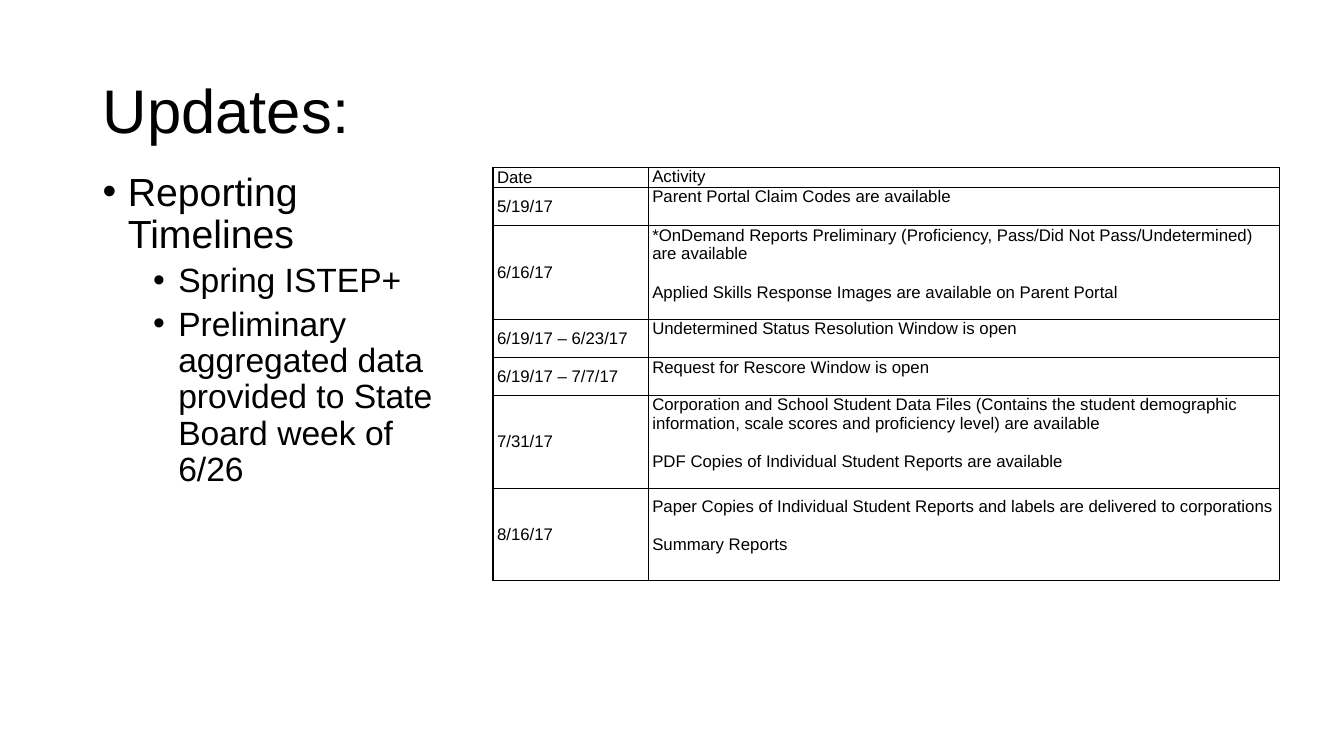
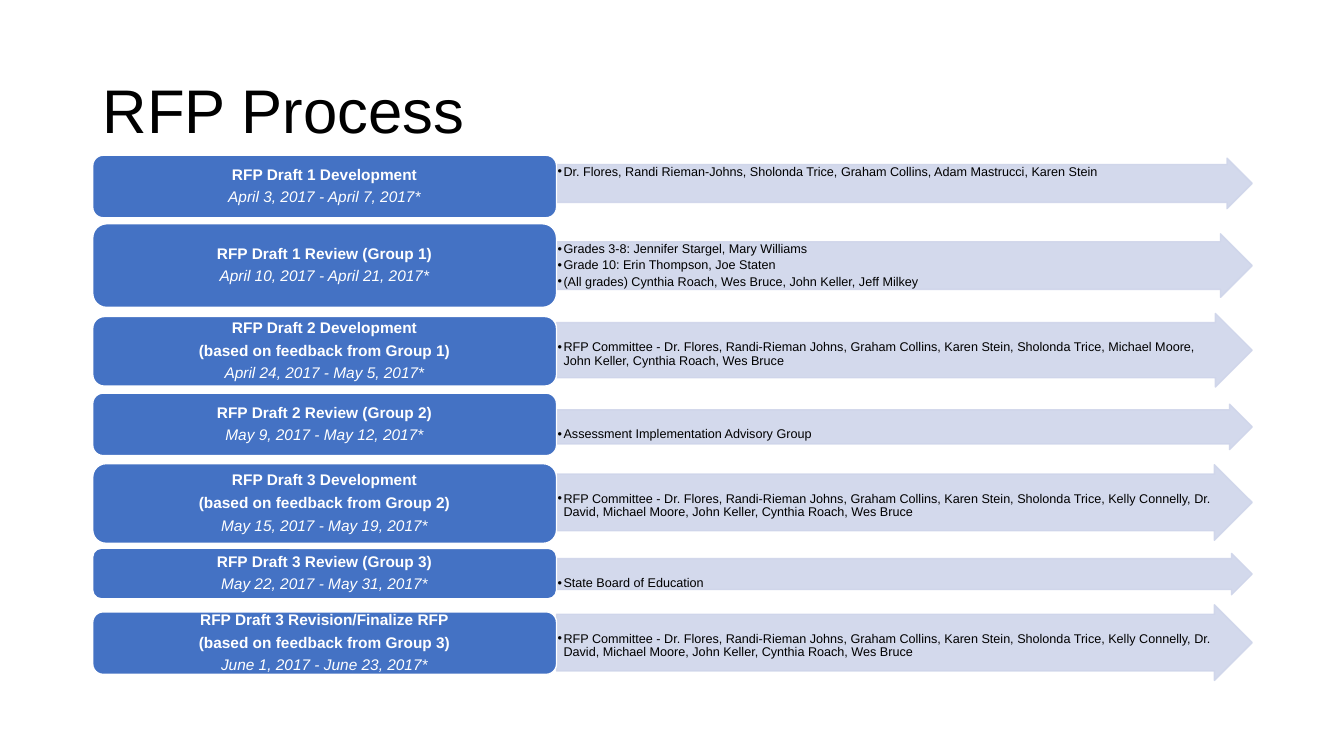
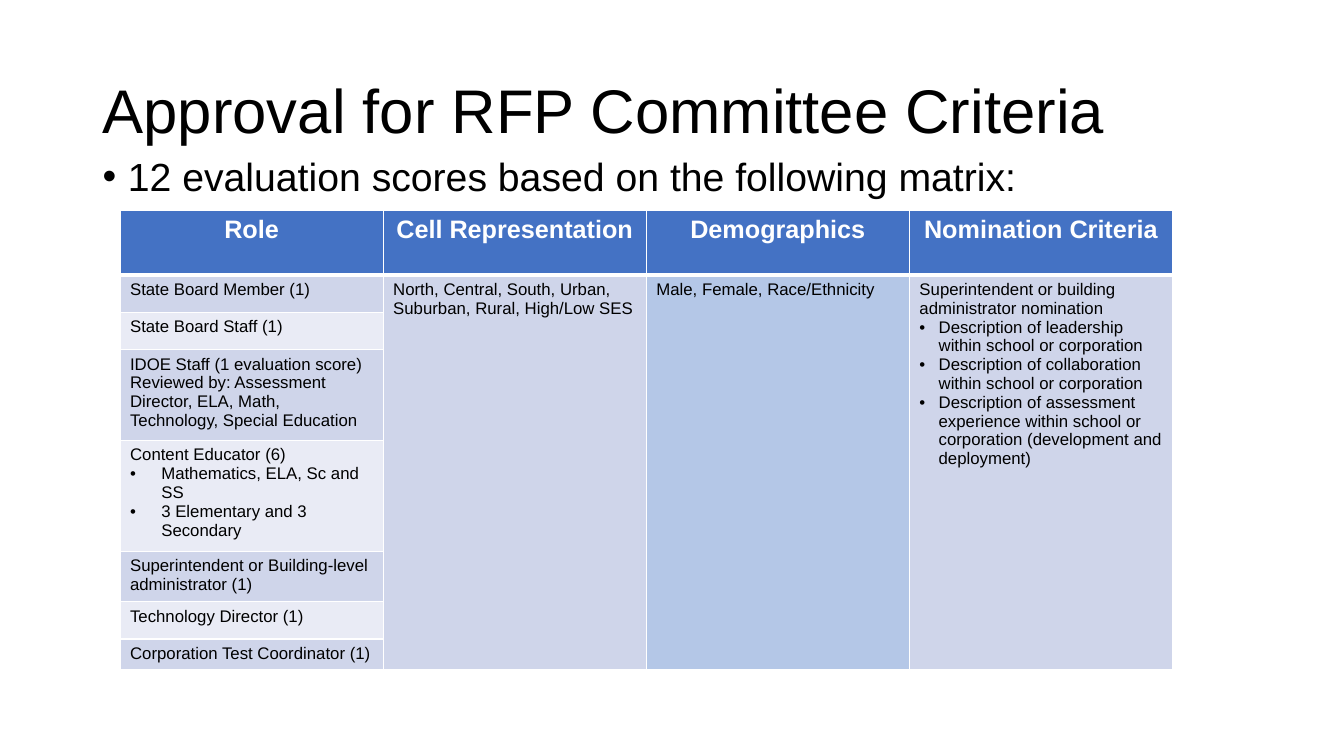
from pptx import Presentation
from pptx.dml.color import RGBColor
from pptx.enum.shapes import MSO_SHAPE
from pptx.enum.text import MSO_ANCHOR, PP_ALIGN
from pptx.util import Pt
from lxml.etree import SubElement
from pptx.oxml.ns import qn

PX = 9144
FONT = "Arial"
COLORS = {
    "black": "000000",
    "white": "FFFFFF",
    "blue": "4472C4",
    "band": "CFD5EA",
    "pale": "E9EBF5",
    "sky": "B4C7E7",
}

STYLES = {
    "title": dict(size=44, spacing=0.9),
    "point": dict(size=28, spacing=0.9, before=10, left=25, hang=25),
    "subpoint": dict(size=24, spacing=0.9, before=5, left=75, hang=25),
    "cell": dict(size=12),
    "cell_gap": dict(size=12, before=13.8),
    "cell_bullet": dict(size=12, left=19, hang=19),
    "cell_wide_bullet": dict(size=12, left=31, hang=31),
    "header": dict(size=18, color="white", bold=True, align=PP_ALIGN.CENTER),
    "stage": dict(size=11, color="white", bold=True, align=PP_ALIGN.CENTER,
                  spacing=0.9, before=4.3),
    "dates": dict(size=11, color="white", italic=True, align=PP_ALIGN.CENTER,
                  spacing=0.9, before=4.3),
    "people": dict(size=9, spacing=0.9, before=1.8, left=6, hang=6),
}

UPDATES = [
    ("Reporting Timelines", "point"),
    ("Spring ISTEP+", "subpoint"),
    ("Preliminary aggregated data provided to State Board week of 6/26", "subpoint"),
]
TIMELINE_COLUMNS = [154, 626]
TIMELINE = [
    (18, 0, "Date", ["Activity"]),
    (38, 0, "5/19/17", ["Parent Portal Claim Codes are available"]),
    (93, 0, "6/16/17", [
        "*OnDemand Reports Preliminary (Proficiency, Pass/Did Not Pass/Undetermined) are available",
        "Applied Skills Response Images are available on Parent Portal"]),
    (38, 0, "6/19/17 – 6/23/17", ["Undetermined Status Resolution Window is open"]),
    (37, 0, "6/19/17 – 7/7/17", ["Request for Rescore Window is open"]),
    (93, 0, "7/31/17", [
        "Corporation and School Student Data Files (Contains the student demographic "
        "information, scale scores and proficiency level) are available",
        "PDF Copies of Individual Student Reports are available"]),
    (91, 8, "8/16/17", [
        "Paper Copies of Individual Student Reports and labels are delivered to corporations",
        "Summary Reports"]),
]

COMMITTEE = "RFP Committee - Dr. Flores, Randi-Rieman Johns, Graham Collins, Karen Stein, Sholonda Trice, "
MEMBERS = "Michael Moore, John Keller, Cynthia Roach, Wes Bruce"
FULL_COMMITTEE = COMMITTEE + "Kelly Connelly, Dr. David, " + MEMBERS
HIGH, LOW = 1, 18
PROCESS = [
    ((154, 62), (157, 50), HIGH, ["RFP Draft 1 Development"], "April 3, 2017 - April 7, 2017*",
     ["Dr. Flores, Randi Rieman-Johns, Sholonda Trice, Graham Collins, Adam Mastrucci, Karen Stein"]),
    ((222, 83), (232, 63), HIGH, ["RFP Draft 1 Review (Group 1)"], "April 10, 2017 - April 21, 2017*",
     ["Grades 3-8: Jennifer Stargel, Mary Williams",
      "Grade 10: Erin Thompson, Joe Staten",
      "(All grades) Cynthia Roach, Wes Bruce, John Keller, Jeff Milkey"]),
    ((314, 69), (311, 73), LOW, ["RFP Draft 2 Development", "(based on feedback from Group 1)"],
     "April 24, 2017 - May 5, 2017*", [COMMITTEE + MEMBERS]),
    ((390, 62), (401, 45), LOW, ["RFP Draft 2 Review (Group 2)"], "May 9, 2017 - May 12, 2017*",
     ["Assessment Implementation Advisory Group"]),
    ((460, 79), (461, 75), LOW, ["RFP Draft 3 Development", "(based on feedback from Group 2)"],
     "May 15, 2017 - May 19, 2017*", [FULL_COMMITTEE]),
    ((544, 50), (549, 41), LOW, ["RFP Draft 3 Review (Group 3)"], "May 22, 2017 - May 31, 2017*",
     ["State Board of Education"]),
    ((607, 62), (600, 75), LOW, ["RFP Draft 3 Revision/Finalize RFP", "(based on feedback from Group 3)"],
     "June 1, 2017 - June 23, 2017*", [FULL_COMMITTEE]),
]

MATRIX_INTRO = [("12 evaluation scores based on the following matrix:", "point")]
MATRIX_HEADERS = ["Role", "Cell Representation", "Demographics", "Nomination Criteria"]
MATRIX_COLUMNS = [261] * len(MATRIX_HEADERS)
MATRIX_HEADER_HEIGHT = 64
ROLES = [
    (37, [("State Board Member (1)", "cell")]),
    (37, [("State Board Staff (1)", "cell")]),
    (84, [("IDOE Staff (1 evaluation score)", "cell"),
          ("Reviewed by: Assessment Director, ELA, Math, Technology, Special Education", "cell")]),
    (104, [("Content Educator (6)", "cell"),
           ("Mathematics, ELA, Sc and SS", "cell_wide_bullet"),
           ("3 Elementary and 3 Secondary", "cell_wide_bullet")]),
    (47, [("Superintendent or Building-level administrator (1)", "cell")]),
    (37, [("Technology Director (1)", "cell")]),
    (28, [("Corporation Test Coordinator (1)", "cell")]),
]
CRITERIA = [
    ("band", [("North, Central, South, Urban, Suburban, Rural, High/Low SES", "cell")]),
    ("sky", [("Male, Female, Race/Ethnicity", "cell")]),
    ("band", [("Superintendent or building administrator nomination", "cell"),
              ("Description of leadership within school or corporation", "cell_bullet"),
              ("Description of collaboration within school or corporation", "cell_bullet"),
              ("Description of assessment experience within school or corporation "
               "(development and deployment)", "cell_bullet")]),
]


def px(*lengths):
    return [round(length * PX) for length in lengths]


def rgb(name):
    return RGBColor.from_string(COLORS[name])


def set_margins(target, left, top, right, bottom):
    (target.margin_left, target.margin_top,
     target.margin_right, target.margin_bottom) = px(left, top, right, bottom)


def write(frame, lines):
    for index, (text, style_name) in enumerate(lines):
        style = STYLES[style_name]
        paragraph = frame.add_paragraph() if index else frame.paragraphs[0]
        paragraph.text = text
        if "hang" in style:
            left, hang = px(style["left"], style["hang"])
            properties = paragraph._p.get_or_add_pPr()
            properties.set("marL", str(left))
            properties.set("indent", str(-hang))
            SubElement(properties, qn("a:buFont"), typeface=FONT)
            SubElement(properties, qn("a:buChar"), char="•")
        paragraph.alignment = style.get("align", PP_ALIGN.LEFT)
        paragraph.line_spacing = style.get("spacing", 1.0)
        paragraph.space_before = Pt(style.get("before", 0) if index else 0)
        for run in paragraph.runs:
            run.font.name = FONT
            run.font.size = Pt(style["size"])
            run.font.bold = style.get("bold", False)
            run.font.italic = style.get("italic", False)
            run.font.color.rgb = rgb(style.get("color", "black"))


def add_text(slide, box, lines, anchor=MSO_ANCHOR.TOP):
    frame = slide.shapes.add_textbox(*px(*box)).text_frame
    frame.word_wrap = True
    frame.vertical_anchor = anchor
    set_margins(frame, 10, 5, 10, 5)
    write(frame, lines)


def add_titled_slide(deck, title):
    slide = deck.slides.add_slide(deck.slide_layouts[6])
    add_text(slide, (92, 40, 1150, 145), [(title, "title")], MSO_ANCHOR.MIDDLE)
    return slide


def add_grid(slide, left, top, widths, heights):
    table = slide.shapes.add_table(
        len(heights), len(widths), *px(left, top, sum(widths), sum(heights))).table
    table.first_row = table.horz_banding = False
    for column, width in zip(table.columns, px(*widths)):
        column.width = width
    for row, height in zip(table.rows, px(*heights)):
        row.height = height
    return table


def set_borders(cell, color, bottom=1):
    properties = cell._tc.get_or_add_tcPr()
    for side, points in (("L", 1), ("R", 1), ("T", 1), ("B", bottom)):
        edge = SubElement(properties, qn("a:ln" + side), w=str(Pt(points)))
        SubElement(SubElement(edge, qn("a:solidFill")), qn("a:srgbClr"), val=COLORS[color])


def fill_cell(cell, lines, fill, bottom=1):
    set_borders(cell, "white", bottom)
    cell.fill.solid()
    cell.fill.fore_color.rgb = rgb(fill)
    write(cell.text_frame, lines)


def add_block(slide, preset, box, fill, line, lines, margins, anchor):
    block = slide.shapes.add_shape(preset, *px(*box))
    block.shadow.inherit = False
    block.fill.solid()
    block.fill.fore_color.rgb = rgb(fill)
    block.line.color.rgb = rgb(line)
    block.line.width = Pt(1)
    block.text_frame.word_wrap = True
    block.text_frame.vertical_anchor = anchor
    set_margins(block.text_frame, *margins)
    write(block.text_frame, lines)
    return block


def build_updates(deck):
    slide = add_titled_slide(deck, "Updates:")
    add_text(slide, (92, 166, 367, 431), UPDATES)
    table = add_grid(slide, 489, 166, TIMELINE_COLUMNS, [row[0] for row in TIMELINE])
    for index, (_, inset, date, activities) in enumerate(TIMELINE):
        date_cell, activity_cell = table.cell(index, 0), table.cell(index, 1)
        for cell, top in ((date_cell, 0), (activity_cell, inset)):
            set_borders(cell, "black")
            cell.fill.background()
            set_margins(cell, 4, top, 4, 0)
        date_cell.vertical_anchor = MSO_ANCHOR.MIDDLE
        activity_cell.vertical_anchor = MSO_ANCHOR.TOP
        write(date_cell.text_frame, [(date, "cell")])
        write(activity_cell.text_frame,
              [(text, "cell_gap") for text in activities])


def build_process(deck):
    slide = add_titled_slide(deck, "RFP Process")
    for (top, height), (arrow_top, arrow_height), inset, stage, dates, people in PROCESS:
        arrow = add_block(slide, MSO_SHAPE.RIGHT_ARROW, (552, arrow_top, 690, arrow_height),
                          "band", "band", [(text, "people") for text in people],
                          (1, inset, 1, 1), MSO_ANCHOR.TOP)
        arrow.adjustments[0] = 0.75
        for color in arrow._element.spPr.iter(qn("a:srgbClr")):
            SubElement(color, qn("a:alpha"), val="90000")
        add_block(slide, MSO_SHAPE.ROUNDED_RECTANGLE, (92, top, 460, height),
                  "blue", "white", [(text, "stage") for text in stage] + [(dates, "dates")],
                  (5, 2, 5, 2), MSO_ANCHOR.MIDDLE)


def build_criteria(deck):
    slide = add_titled_slide(deck, "Approval for RFP Committee Criteria")
    add_text(slide, (92, 151, 1150, 525), MATRIX_INTRO)
    table = add_grid(slide, 119, 209, MATRIX_COLUMNS,
                     [MATRIX_HEADER_HEIGHT] + [height for height, _ in ROLES])
    for column, header in enumerate(MATRIX_HEADERS):
        fill_cell(table.cell(0, column), [(header, "header")], "blue", bottom=3)
    for row, (_, lines) in enumerate(ROLES, 1):
        fill_cell(table.cell(row, 0), lines, "band" if row % 2 else "pale")
    for column, (fill, lines) in enumerate(CRITERIA, 1):
        table.cell(1, column).merge(table.cell(len(ROLES), column))
        fill_cell(table.cell(1, column), lines, fill)


def main():
    deck = Presentation()
    deck.slide_width, deck.slide_height = px(1333, 750)
    build_updates(deck)
    build_process(deck)
    build_criteria(deck)
    deck.save("out.pptx")


if __name__ == "__main__":
    main()
